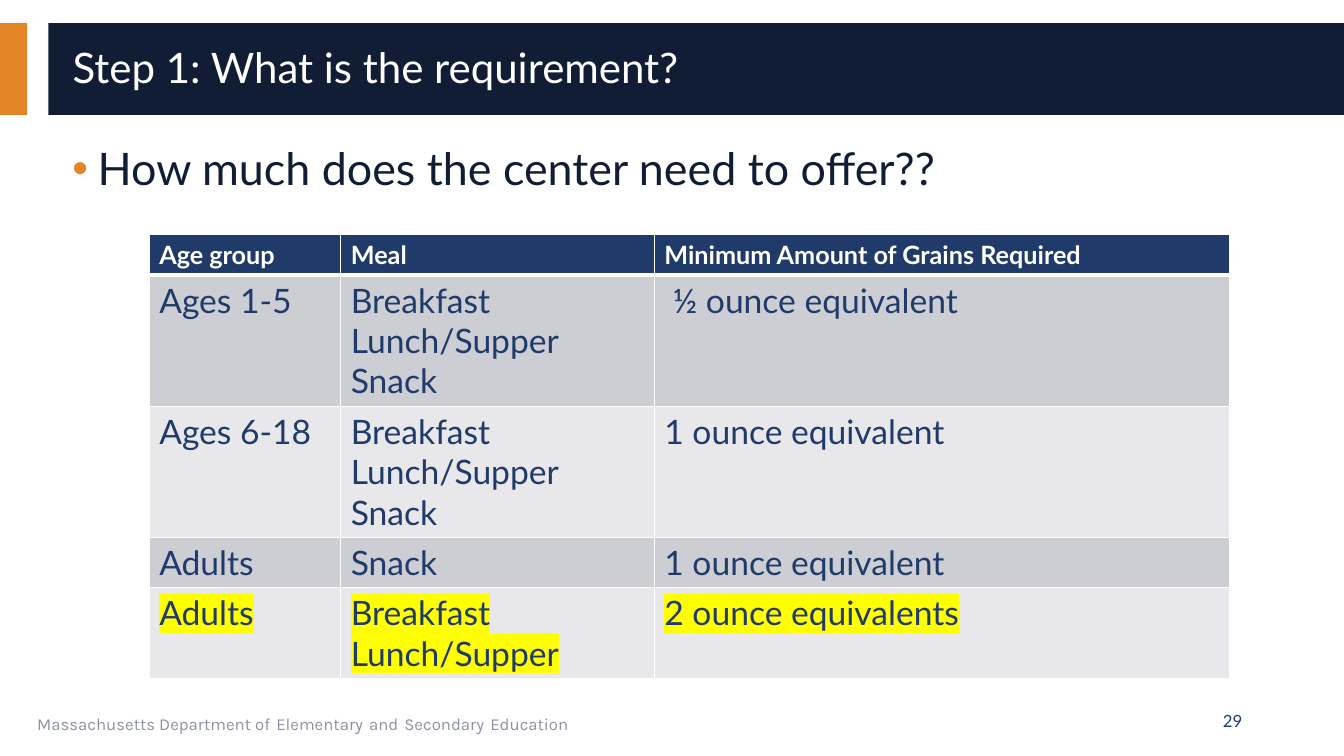
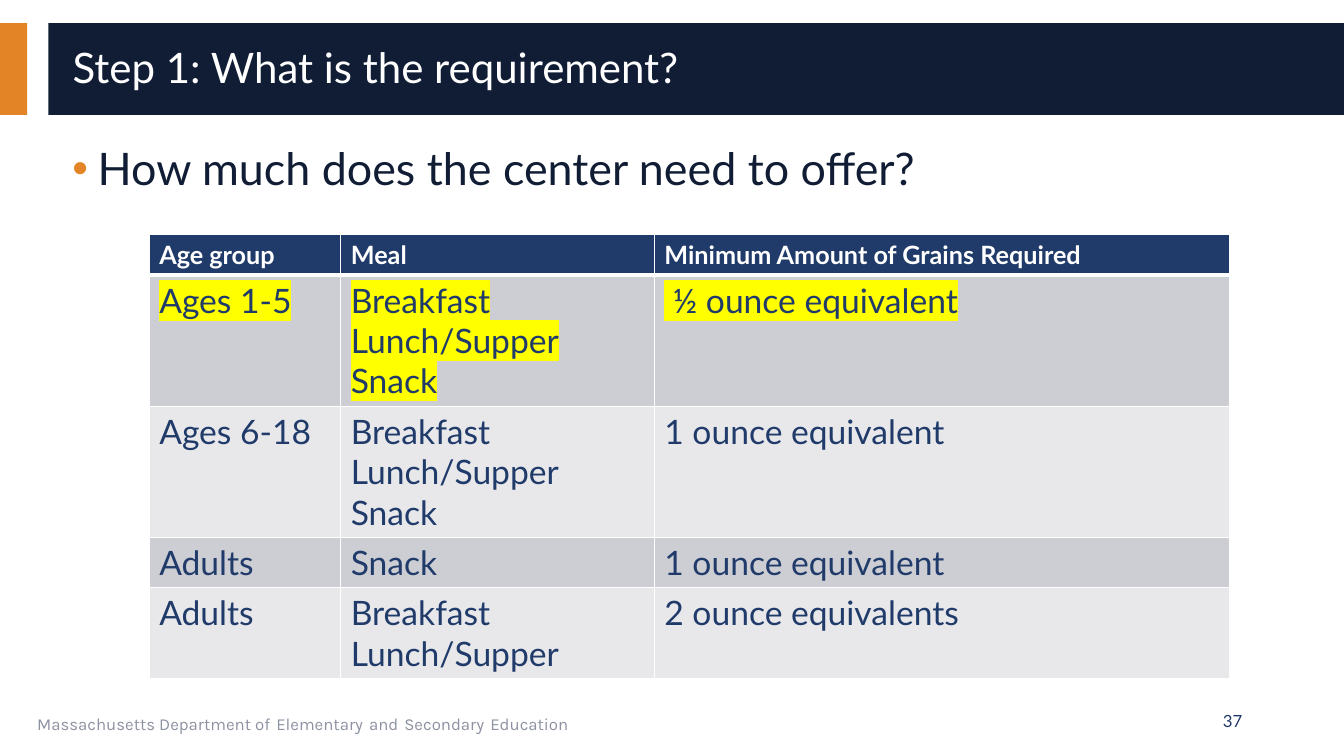
"""Build two slides on the minimum amount of grains required by age group."""
from lxml import etree
from pptx import Presentation
from pptx import util as u
from pptx.dml.color import RGBColor
from pptx.enum import shapes, text
from pptx.oxml import ns

COLOURS = {
    "orange": "E38526", "navy": "101D35", "blue": "203B6A", "white": "FFFFFF",
    "grey": "8D92A1", "dark band": "CDCED4", "light band": "E8E8EB", "yellow": "FFFF00",
}
BANDS = [(0, 0.27, "orange"), (0.48, 12.86, "navy")]
FOOTER = ["Massachusetts Department of", "Elementary", "and", "Secondary", "Education"]
COLUMN_WIDTHS = [1.9, 3.11, 5.71]
HEADINGS = ["Age group", "Meal", "Minimum Amount of Grains Required"]
REQUIREMENTS = [
    ["Ages 1-5", "Breakfast\nLunch/Supper\nSnack", " ½ ounce equivalent"],
    ["Ages 6-18", "Breakfast\nLunch/Supper\nSnack", "1 ounce equivalent"],
    ["Adults", "Snack", "1 ounce equivalent"],
    ["Adults", "Breakfast\nLunch/Supper", "2 ounce equivalents"],
]
SLIDES = [
    ("How much does the center need to offer??", 4, "29"),
    ("How much does the center need to offer?", 1, "37"),
]


def add_text(paragraph, words, size, colour, font="Lato", bold=False, highlight=None):
    run = paragraph.add_run()
    run.text = words
    run.font.size = u.Pt(size)
    run.font.bold = bold
    run.font.color.rgb = RGBColor.from_string(COLOURS[colour])
    if highlight:
        mark = etree.SubElement(run.font.fill._xPr, ns.qn("a:highlight"))
        etree.SubElement(mark, ns.qn("a:srgbClr"), val=COLOURS[highlight])
    run.font.name = font


def add_border(cell, position, side, points):
    border = etree.Element(ns.qn(f"a:ln{side}"), w=str(u.Pt(points)))
    fill = etree.SubElement(border, ns.qn("a:solidFill"))
    etree.SubElement(fill, ns.qn("a:srgbClr"), val=COLOURS["white"])
    cell._tc.get_or_add_tcPr().insert(position, border)


deck = Presentation()
deck.slide_width, deck.slide_height = u.Inches(13.33), u.Inches(7.5)

for question_text, highlighted_row, number_text in SLIDES:
    slide = deck.slides.add_slide(deck.slide_layouts[5])

    for left, width, colour in BANDS:
        band = slide.shapes.add_shape(
            shapes.MSO_SHAPE.RECTANGLE,
            u.Inches(left), u.Inches(0.23), u.Inches(width), u.Inches(0.91))
        band.shadow.inherit = False
        band.fill.solid()
        band.fill.fore_color.rgb = RGBColor.from_string(COLOURS[colour])
        band.line.fill.background()

    footer = slide.shapes.add_textbox(
        u.Inches(0.27), u.Inches(6.95), u.Inches(8.44), u.Inches(0.4)).text_frame
    footer.word_wrap = True
    for position, words in enumerate(FOOTER):
        if position:
            add_text(footer.paragraphs[0], " ", 18, "blue", font="Karla")
        add_text(footer.paragraphs[0], words, 12, "grey", font="Karla")

    title = slide.shapes.title
    title.element.getparent().append(title.element)
    title.left, title.top = u.Inches(0.62), u.Inches(0.32)
    title.width, title.height = u.Inches(12.44), u.Inches(0.74)
    title.text_frame.auto_size = text.MSO_AUTO_SIZE.NONE
    title.text_frame.vertical_anchor = text.MSO_ANCHOR.MIDDLE
    heading = title.text_frame.paragraphs[0]
    heading.alignment = text.PP_ALIGN.LEFT
    heading.line_spacing = 0.9
    add_text(heading, "Step 1: What is the requirement?", 30, "white")

    question = slide.shapes.add_textbox(
        u.Inches(0.62), u.Inches(1.35), u.Inches(12.44), u.Inches(0.74)).text_frame
    question.word_wrap = True
    bullet = question.paragraphs[0]._p.get_or_add_pPr()
    bullet.set("marL", str(u.Inches(0.25)))
    bullet.set("indent", str(u.Inches(-0.25)))
    bullet_colour = etree.SubElement(bullet, ns.qn("a:buClr"))
    etree.SubElement(bullet_colour, ns.qn("a:srgbClr"), val=COLOURS["orange"])
    etree.SubElement(bullet, ns.qn("a:buFont"), typeface="Arial")
    etree.SubElement(bullet, ns.qn("a:buChar"), char="•")
    add_text(question.paragraphs[0], question_text, 32, "navy")

    number = slide.shapes.add_textbox(
        u.Inches(9.42), u.Inches(6.95), u.Inches(3), u.Inches(0.4)).text_frame
    number.word_wrap = True
    number.vertical_anchor = text.MSO_ANCHOR.MIDDLE
    number.paragraphs[0].alignment = text.PP_ALIGN.RIGHT
    add_text(number.paragraphs[0], number_text, 12, "blue")

    rows = [HEADINGS] + REQUIREMENTS
    grains = slide.shapes.add_table(
        len(rows), len(HEADINGS), u.Inches(1.48), u.Inches(2.33),
        u.Inches(sum(COLUMN_WIDTHS)), u.Inches(4.4)).table
    for column, width in zip(grains.columns, COLUMN_WIDTHS):
        column.width = u.Inches(width)
    for r, row in enumerate(rows):
        line_count = max(entry.count("\n") + 1 for entry in row)
        grains.rows[r].height = u.Inches(0.1 + 0.4 * line_count if r else 0.4)
        band_colour = ("dark band" if r % 2 else "light band") if r else "blue"
        if r:
            style = {"size": 24, "colour": "blue",
                     "highlight": "yellow" if r == highlighted_row else None}
        else:
            style = {"size": 18, "colour": "white", "bold": True}
        for c, entry in enumerate(row):
            cell = grains.cell(r, c)
            cell.fill.solid()
            cell.fill.fore_color.rgb = RGBColor.from_string(COLOURS[band_colour])
            for position, side in enumerate("LRTB"):
                under_heading = (r, side) in [(0, "B"), (1, "T")]
                add_border(cell, position, side, 3 if under_heading else 1)
            for position, line in enumerate(entry.split("\n")):
                frame = cell.text_frame
                paragraph = frame.add_paragraph() if position else frame.paragraphs[0]
                add_text(paragraph, line, **style)

deck.save("out.pptx")
